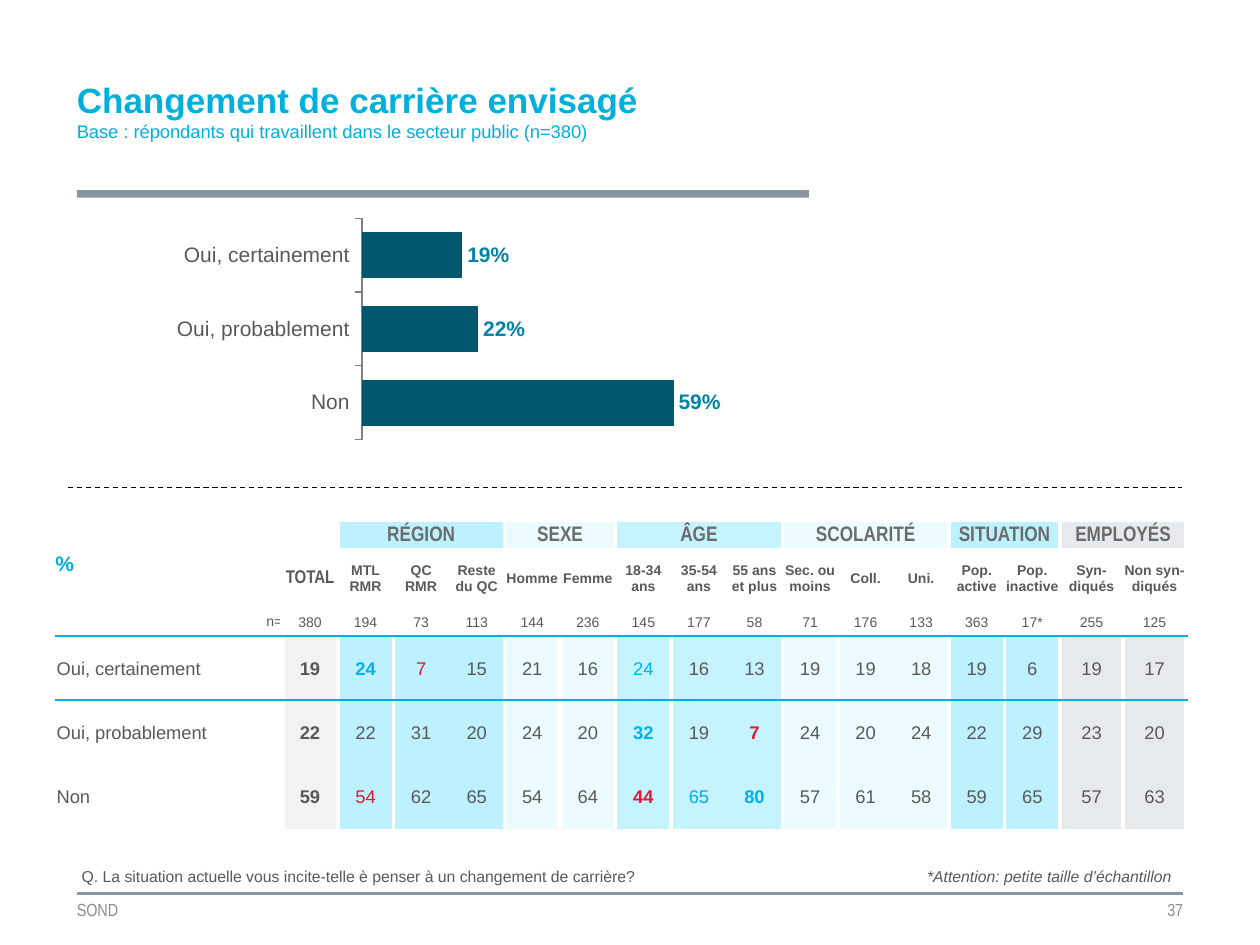
"""Build the career-change survey slide: a bar chart above a cross table."""
from dataclasses import dataclass
from typing import Any

from lxml import etree
from pptx import Presentation
from pptx.chart.data import CategoryChartData
from pptx.dml.color import RGBColor
from pptx.enum.chart import XL_CHART_TYPE, XL_LABEL_POSITION, XL_TICK_LABEL_POSITION, XL_TICK_MARK
from pptx.enum.dml import MSO_LINE
from pptx.enum.shapes import MSO_CONNECTOR, MSO_SHAPE
from pptx.enum.text import MSO_ANCHOR, PP_ALIGN
from pptx.oxml.ns import qn
from pptx.util import Inches, Pt

LEFT, CENTER, RIGHT = PP_ALIGN.LEFT, PP_ALIGN.CENTER, PP_ALIGN.RIGHT
MIDDLE = MSO_ANCHOR.MIDDLE
DASH = MSO_LINE.DASH
BAR = XL_CHART_TYPE.BAR_CLUSTERED
OUTSIDE_END = XL_LABEL_POSITION.OUTSIDE_END
LOW = XL_TICK_LABEL_POSITION.LOW
TICK_OUT = XL_TICK_MARK.OUTSIDE
NO_TABLE_STYLE = "{2D5ABB26-0587-4C30-8999-92F81FD0307C}"


@dataclass(frozen=True)
class Theme:
    sans: str = "Arial"
    narrow: str = "Arial Narrow"
    accent: str = "00AFDC"
    bar: str = "00576E"
    label: str = "0083A5"
    text: str = "595959"
    heading: str = "6B6B6B"
    axis: str = "7F7F7F"
    footer: str = "8C8C8C"
    rule: str = "88959E"
    black: str = "000000"
    white: str = "FFFFFF"
    high: str = "00B0F0"
    low: str = "E31836"
    total: str = "F2F2F2"
    blue: str = "BDF1FF"
    pale: str = "EBFBFF"
    sky: str = "C5F3FF"
    grey: str = "E7EAEC"
    title_size: float = 20
    large: float = 12
    medium: float = 10.5
    footer_size: float = 10
    note: float = 9
    small: float = 8


THEME = Theme()
ANSWERS = ["Oui, certainement", "Oui, probablement", "Non"]
SHARES = [0.19, 0.22, 0.59]
GROUPS = [
    ("", 1, THEME.total), ("RÉGION", 3, THEME.blue), ("SEXE", 2, THEME.pale),
    ("ÂGE", 3, THEME.sky), ("SCOLARITÉ", 3, THEME.pale),
    ("SITUATION", 2, THEME.blue), ("EMPLOYÉS", 2, THEME.grey),
]
SEGMENTS = [
    "TOTAL", "MTL\nRMR", "QC\nRMR", "Reste\ndu QC", "Homme", "Femme",
    "18-34 ans", "35-54 ans", "55 ans et plus", "Sec. ou moins", "Coll.", "Uni.",
    "Pop. active", "Pop. inactive", "Syn-diqués", "Non syn-diqués",
]
COUNTS = "380 194 73 113 144 236 145 177 58 71 176 133 363 17* 255 125".split()
PERCENTS = [
    [19, 24, 7, 15, 21, 16, 24, 16, 13, 19, 19, 18, 19, 6, 19, 17],
    [22, 22, 31, 20, 24, 20, 32, 19, 7, 24, 20, 24, 22, 29, 23, 20],
    [59, 54, 62, 65, 54, 64, 44, 65, 80, 57, 61, 58, 59, 65, 57, 63],
]
HIGH = {(0, 1), (0, 6), (1, 6), (2, 7), (2, 8)}
LOW_VALUES = {(0, 2), (1, 8), (2, 1), (2, 6)}
BOLD = {(0, 1), (1, 6), (1, 8), (2, 6), (2, 8)}


def style_font(font, size, color=THEME.text, face=THEME.sans, bold=False, italic=False):
    """Apply a complete character format."""
    font.name, font.size, font.bold, font.italic = face, Pt(size), bold, italic
    font.color.rgb = RGBColor.from_string(color)


def write(para, text, align=LEFT, spacing=None, **style):
    """Write text into a paragraph, breaking lines at newlines."""
    para.alignment = align
    if spacing:
        para.line_spacing = spacing
    for index, line in enumerate(text.split("\n")):
        if index:
            para.add_line_break()
        span = para.add_run()
        span.text = line
        style_font(span.font, **style)


def set_insets(target, left, top, right, bottom):
    """Set the four inner margins of a text frame or cell in inches."""
    target.margin_left, target.margin_top = Inches(left), Inches(top)
    target.margin_right, target.margin_bottom = Inches(right), Inches(bottom)


@dataclass
class SlideBuilder:
    """Draw on one slide in grid units, 100 columns by 75 rows."""
    page: Any
    theme: Theme
    unit: float = 0.1

    def grid(self, *lengths):
        """Turn grid units into slide lengths."""
        return [Inches(length * self.unit) for length in lengths]

    def rule(self, left, top, right, color, width, dash=None):
        """Draw a horizontal line."""
        line = self.page.shapes.add_connector(
            MSO_CONNECTOR.STRAIGHT, *self.grid(left, top, right, top))
        line.line.color.rgb = RGBColor.from_string(color)
        line.line.width = Pt(width)
        if dash:
            line.line.dash_style = dash
        etree.SubElement(line._element.spPr, qn("a:effectLst"))

    def band(self, box, color):
        """Draw a filled rectangle."""
        shape = self.page.shapes.add_shape(MSO_SHAPE.RECTANGLE, *self.grid(*box))
        shape.shadow.inherit = False
        shape.fill.solid()
        shape.fill.fore_color.rgb = RGBColor.from_string(color)
        shape.line.fill.background()

    def text(self, box, lines, insets=(0, 0, 0, 0), anchor=MIDDLE, wrap=True):
        """Add a text box from pairs of text and format."""
        frame = self.page.shapes.add_textbox(*self.grid(*box)).text_frame
        frame.word_wrap, frame.vertical_anchor = wrap, anchor
        set_insets(frame, *insets)
        for index, (text, style) in enumerate(lines):
            write(frame.add_paragraph() if index else frame.paragraphs[0], text, **style)

    def bar_chart(self, box, categories, values, plot):
        """Add a horizontal bar chart with a fixed inner plot area."""
        data = CategoryChartData(number_format="0%")
        data.categories = categories
        data.add_series("Series 1", values)
        chart = self.page.shapes.add_chart(BAR, *self.grid(*box), data).chart
        chart.has_legend = chart.has_title = False
        style_font(chart.font, self.theme.medium, self.theme.axis)
        category, value = chart.category_axis, chart.value_axis
        category.reverse_order, category.major_tick_mark = True, TICK_OUT
        category.tick_label_position = LOW
        category.format.line.color.rgb = RGBColor.from_string(self.theme.axis)
        style_font(category.tick_labels.font, self.theme.large)
        value.visible = value.has_major_gridlines = False
        value.minimum_scale, value.maximum_scale, value.major_unit = 0, 0.8, 0.2
        bars = chart.plots[0]
        bars.gap_width, bars.vary_by_categories, bars.has_data_labels = 60, False, True
        fill = bars.series[0].format.fill
        fill.solid()
        fill.fore_color.rgb = RGBColor.from_string(self.theme.bar)
        labels = bars.data_labels
        labels.show_value, labels.position = True, OUTSIDE_END
        labels.number_format, labels.number_format_is_linked = "0%", False
        style_font(labels.font, self.theme.large, self.theme.label, bold=True)
        area = chart._chartSpace.chart.plotArea
        for old in area.findall(qn("c:layout")):
            area.remove(old)
        layout = etree.Element(qn("c:layout"))
        area.insert(0, layout)
        manual = etree.SubElement(layout, qn("c:manualLayout"))
        settings = [("layoutTarget", "inner"), ("xMode", "edge"), ("yMode", "edge"), *zip("xywh", plot)]
        for tag, setting in settings:
            etree.SubElement(manual, qn(f"c:{tag}"), val=str(setting))

    def table(self, left, top, widths, heights):
        """Add a plain table without a style."""
        frame = self.page.shapes.add_table(
            len(heights), len(widths), *self.grid(left, top, sum(widths), sum(heights)))
        table = frame.table
        table.first_row = table.horz_banding = False
        table._tbl.tblPr.find(qn("a:tableStyleId")).text = NO_TABLE_STYLE
        for parts, field, sizes in ((table.columns, "width", widths), (table.rows, "height", heights)):
            for part, size in zip(parts, self.grid(*sizes)):
                setattr(part, field, size)
        return table

    def cell(self, cell, text="", fill=None, borders=None, insets=(0.01, 0.01, 0.01, 0), **style):
        """Fill one table cell; borders map a side to a colour and width."""
        cell.vertical_anchor = MIDDLE
        set_insets(cell, *insets)
        for side, (color, width) in (borders or {}).items():
            line = etree.SubElement(cell._tc.get_or_add_tcPr(), qn(f"a:ln{side}"), w=str(Pt(width)))
            etree.SubElement(etree.SubElement(line, qn("a:solidFill")), qn("a:srgbClr"), val=color)
        if fill:
            cell.fill.solid()
            cell.fill.fore_color.rgb = RGBColor.from_string(fill)
        else:
            cell.fill.background()
        para = cell.text_frame.paragraphs[0]
        if text:
            write(para, text, **style)
        else:
            etree.SubElement(para._p, qn("a:endParaRPr"), sz=str(int(self.theme.small * 100)))


def fill_table(slide, theme):
    """Lay out the cross table of answers by segment."""
    table = slide.table(4.4, 41.4, [18] + [4.41] * 14 + [5] * 2, [1.8, 4.7, 1.9] + [5.1] * 3)
    edge, blue = (theme.white, 2.25), (theme.accent, 1.5)
    under = {2: {"B": blue}, 3: {"T": blue}}
    side = {"R": (theme.white, 3)}
    stub = dict(insets=(0, 0.05, 0, 0.05), spacing=0.95)
    slide.cell(table.cell(0, 0), "%", borders=side, size=theme.large, color=theme.accent, bold=True, **stub)
    slide.cell(table.cell(1, 0), borders=side)
    slide.cell(table.cell(2, 0), "n=", borders=side | under[2], size=theme.small, align=RIGHT, **stub)
    table.cell(0, 0).merge(table.cell(1, 0))
    for row, answer in enumerate(ANSWERS, 3):
        slide.cell(table.cell(row, 0), answer, borders=side | under.get(row, {}), size=theme.medium)
    column = 1
    for name, count, tint in GROUPS:
        first, last = column, column + count - 1
        for column in range(first, last + 1):
            sides = ({"L": edge} if column == first else {}) | ({"R": edge} if column == last else {})
            item, total = column - 1, column == 1
            slide.cell(table.cell(0, column), name if column == first else "", tint if name else None,
                       {"L": edge, "R": edge}, size=theme.large, color=theme.heading,
                       face=theme.narrow, bold=True, align=CENTER)
            slide.cell(table.cell(1, column), SEGMENTS[item], None, sides, bold=True, align=CENTER,
                       size=theme.medium if total else theme.small,
                       face=theme.narrow if total else theme.sans)
            slide.cell(table.cell(2, column), COUNTS[item], None, sides | under[2],
                       size=theme.small, align=CENTER)
            for row, values in enumerate(PERCENTS):
                spot = (row, item)
                color = theme.high if spot in HIGH else theme.low if spot in LOW_VALUES else theme.text
                slide.cell(table.cell(row + 3, column), str(values[item]), tint,
                           sides | under.get(row + 3, {}), size=theme.medium, color=color,
                           bold=total or spot in BOLD, align=CENTER)
        if count > 1:
            table.cell(0, first).merge(table.cell(0, last))
        column = last + 1


def main():
    """Build and save the deck."""
    deck = Presentation()
    deck.slide_width, deck.slide_height = Inches(10), Inches(7.5)
    theme = THEME
    slide = SlideBuilder(deck.slides.add_slide(deck.slide_layouts[6]), theme)
    footer = dict(size=theme.footer_size, color=theme.footer, face=theme.narrow)
    padding = (0.1, 0.05, 0.1, 0.05)
    slide.rule(6.1, 70.9, 93.9, theme.rule, 1.5)
    slide.band((6.1, 15.1, 58.1, 0.6), theme.rule)
    slide.text((6.1, 70.9, 28, 2.6), [("SOND", footer)])
    slide.text((65.5, 70.9, 28.4, 2.6), [("37", footer | dict(align=RIGHT))])
    slide.bar_chart((-3.5, 16.9, 80.6, 18.4), ANSWERS, SHARES, (0.4, 0.023, 0.416, 0.955))
    slide.text((5.5, 68.3, 88.7, 2.5), [
        ("Q. La situation actuelle vous incite-telle è penser à un changement de carrière?",
         dict(size=theme.note))], padding)
    slide.text((6.1, 4.1, 58.1, 11), [
        ("Changement de carrière envisagé", dict(size=theme.title_size, color=theme.accent, bold=True)),
        ("Base : répondants qui travaillent dans le secteur public (n=380)",
         dict(size=theme.medium, color=theme.accent))], (0, 0, 0, 0.17))
    fill_table(slide, theme)
    slide.rule(5.4, 38.7, 93.8, theme.black, 0.75, DASH)
    slide.text((72.6, 68.3, 21.6, 2.5), [
        ("*Attention: petite taille d’échantillon", dict(size=theme.note, italic=True))], padding, wrap=False)
    deck.save("out.pptx")


if __name__ == "__main__":
    main()
